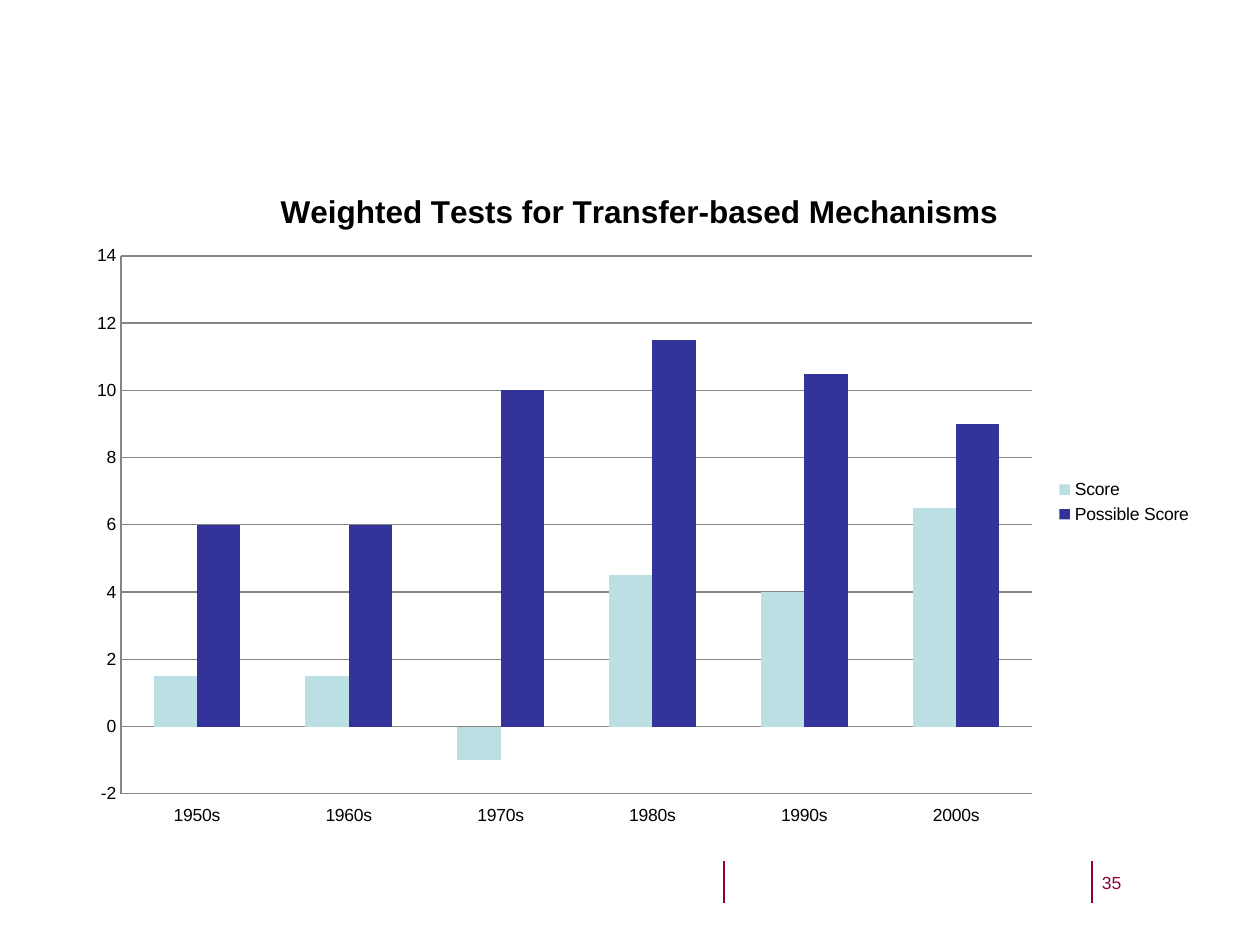
from dataclasses import dataclass
from typing import NamedTuple

from lxml.etree import SubElement
from pptx import Presentation
from pptx.chart.data import CategoryChartData
from pptx.dml.color import RGBColor as Rgb
from pptx.enum.chart import XL_CHART_TYPE as ChartType
from pptx.enum.chart import XL_LEGEND_POSITION as LegendPosition
from pptx.enum.chart import XL_TICK_LABEL_POSITION as LabelPosition
from pptx.enum.chart import XL_TICK_MARK as TickMark
from pptx.enum.shapes import MSO_CONNECTOR as Connector
from pptx.oxml import parse_xml
from pptx.oxml.ns import nsdecls, qn
from pptx.util import Emu, Pt


@dataclass(frozen=True)
class Theme:
    """Colours, font and type sizes of the slide."""
    font: str = "Arial"
    ink: str = "000000"
    accent: str = "90003E"
    axis: str = "868686"
    body_size: int = 10
    title_size: int = 18
    rule_width: float = 0.75


class Box(NamedTuple):
    """Left, top, width and height in px."""
    left: int
    top: int
    width: int
    height: int


class Rule(NamedTuple):
    """A vertical footer line in px."""
    x: int
    top: int
    bottom: int


class ScoreSeries(NamedTuple):
    """One set of bars."""
    name: str
    values: tuple[float, ...]
    color: str


THEME = Theme()
PX_PER_INCH = 126
CHART = Box(74, 165, 1131, 674)
PLOT = Box(121, 256, 911, 538)
PAGE_NUMBER = Box(1102, 872, 73, 54)
RULES = [Rule(x, 861, 903) for x in (1092, 724)]
DECADES = [f"{year}s" for year in range(1950, 2001, 10)]
SCORES = [
    ScoreSeries("Score", (1.5, 1.5, -1, 4.5, 4, 6.5), "BBE0E3"),
    ScoreSeries("Possible Score", (6, 6, 10, 11.5, 10.5, 9), "333399"),
]


def px(length: int) -> Emu:
    """Turn px into EMU."""
    return Emu(round(length * 914400 / PX_PER_INCH))


def style_font(font, size: int, color: str, bold: bool = False) -> None:
    """Set the face, size, weight and colour of a font."""
    font.name, font.size, font.bold = THEME.font, Pt(size), bold
    font.color.rgb = Rgb.from_string(color)


def style_line(line, color: str) -> None:
    """Set the colour and the shared width of a line."""
    line.color.rgb = Rgb.from_string(color)
    line.width = Pt(THEME.rule_width)


def write_text(frame, text: str, *, size: int, color: str, bold: bool = False) -> None:
    """Write one formatted run into a text frame."""
    run = frame.paragraphs[0].add_run()
    run.text = text
    style_font(run.font, size, color, bold)


def draw_rule(slide, rule: Rule) -> None:
    """Draw a vertical footer line."""
    divider = slide.shapes.add_connector(
        Connector.STRAIGHT, px(rule.x), px(rule.top), px(rule.x), px(rule.bottom))
    style_line(divider.line, THEME.accent)
    SubElement(divider.element.spPr, qn("a:effectLst"))


def draw_page_number(slide, box: Box, number: str) -> None:
    """Draw the page number without margins."""
    frame = slide.shapes.add_textbox(*map(px, box)).text_frame
    frame.word_wrap = True
    frame.margin_left = frame.margin_top = frame.margin_right = frame.margin_bottom = 0
    write_text(frame, number, size=THEME.body_size, color=THEME.accent)


def place_plot(chart, outer: Box, inner: Box) -> None:
    """Fix the inner plot area within the chart."""
    shares = {
        "x": (inner.left - outer.left) / outer.width,
        "y": (inner.top - outer.top) / outer.height,
        "w": inner.width / outer.width,
        "h": inner.height / outer.height,
    }
    modes = "".join(f'<c:{side}Mode val="edge"/>' for side in "xy")
    values = "".join(f'<c:{key} val="{share:.4f}"/>' for key, share in shares.items())
    plot_area = chart.element.find(f".//{qn('c:plotArea')}") if hasattr(chart, "element") \
        else chart._chartSpace.find(f".//{qn('c:plotArea')}")
    for layout in plot_area.findall(qn("c:layout")):
        plot_area.remove(layout)
    plot_area.insert(0, parse_xml(
        f'<c:layout {nsdecls("c")}><c:manualLayout><c:layoutTarget val="inner"/>'
        f"{modes}{values}</c:manualLayout></c:layout>"))


def draw_score_chart(slide, box: Box, title: str, scores: list[ScoreSeries]) -> None:
    """Draw the clustered columns with title, axes and legend."""
    data = CategoryChartData()
    data.categories = DECADES
    for score in scores:
        data.add_series(score.name, score.values)
    chart = slide.shapes.add_chart(ChartType.COLUMN_CLUSTERED, *map(px, box), data).chart
    style_font(chart.font, THEME.body_size, THEME.ink)
    chart.has_title = True
    write_text(chart.chart_title.text_frame, title,
               size=THEME.title_size, color=THEME.ink, bold=True)
    chart.chart_title.include_in_layout = False
    chart.has_legend = True
    chart.legend.position = LegendPosition.RIGHT
    chart.legend.include_in_layout = False

    for axis in (chart.category_axis, chart.value_axis):
        axis.major_tick_mark = axis.minor_tick_mark = TickMark.NONE
        style_line(axis.format.line, THEME.axis)
    chart.category_axis.tick_label_position = LabelPosition.LOW
    scale = chart.value_axis
    scale.minimum_scale, scale.maximum_scale, scale.major_unit = -2, 14, 2
    scale.has_major_gridlines = True
    style_line(scale.major_gridlines.format.line, THEME.axis)

    columns = chart.plots[0]
    columns.gap_width, columns.overlap = 150, 0
    columns.vary_by_categories = False
    for bars, score in zip(columns.series, scores):
        bars.invert_if_negative = False
        bars.format.fill.solid()
        bars.format.fill.fore_color.rgb = Rgb.from_string(score.color)
    place_plot(chart, box, PLOT)


def main() -> None:
    """Build and save the slide."""
    deck = Presentation()
    deck.slide_width, deck.slide_height = px(1260), px(945)
    slide = deck.slides.add_slide(deck.slide_layouts[6])
    for rule in RULES:
        draw_rule(slide, rule)
    draw_page_number(slide, PAGE_NUMBER, "35")
    draw_score_chart(slide, CHART, "Weighted Tests for Transfer-based Mechanisms", SCORES)
    deck.save("out.pptx")


if __name__ == "__main__":
    main()
